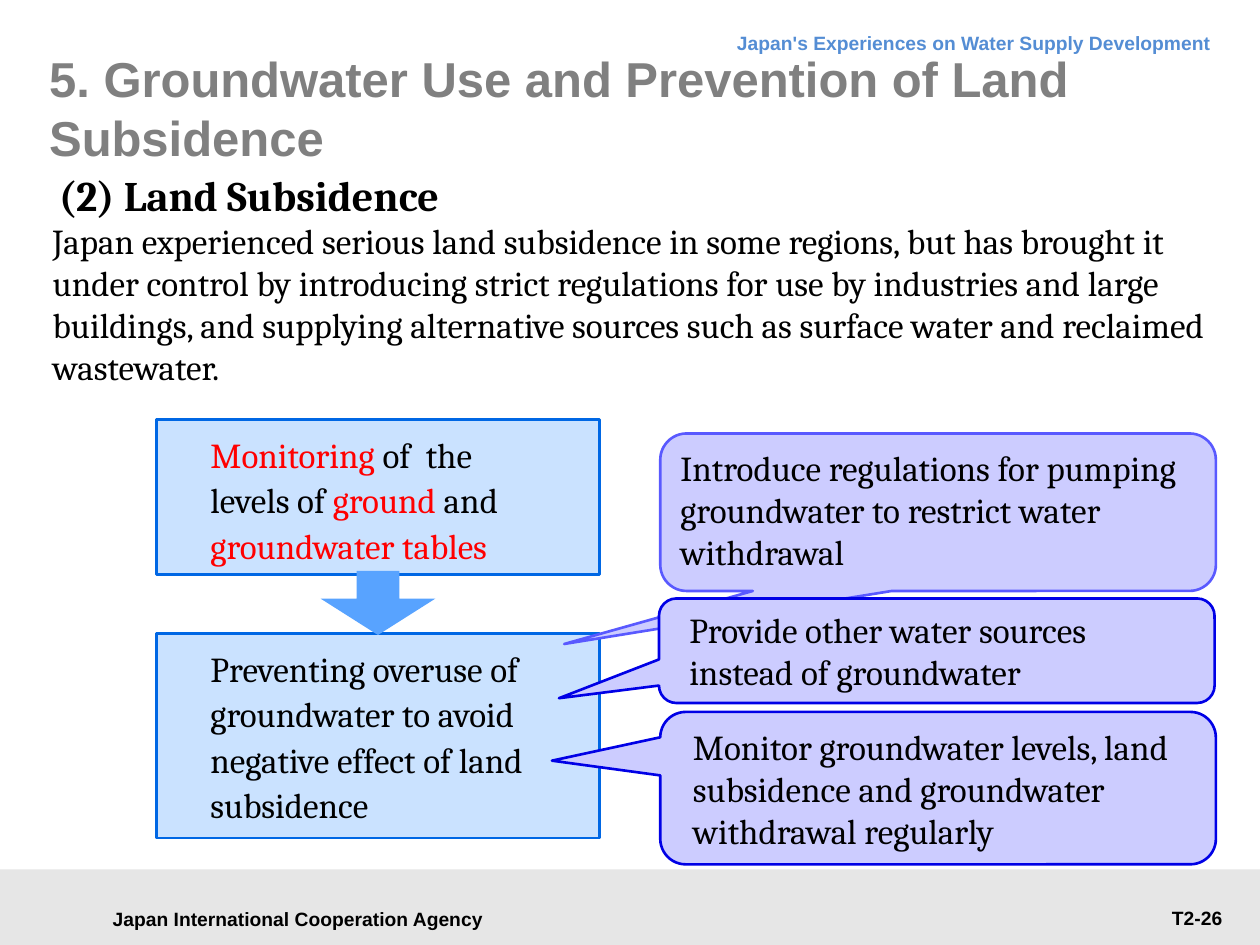
from dataclasses import dataclass

from pptx import Presentation
from pptx.dml.color import RGBColor
from pptx.enum.shapes import MSO_SHAPE
from pptx.enum.text import MSO_ANCHOR, MSO_AUTO_SIZE, PP_ALIGN
from pptx.util import Inches, Pt

RECT, ARROW = MSO_SHAPE.RECTANGLE, MSO_SHAPE.DOWN_ARROW
CALLOUT = MSO_SHAPE.ROUNDED_RECTANGULAR_CALLOUT
TOP, MIDDLE = MSO_ANCHOR.TOP, MSO_ANCHOR.MIDDLE
LEFT, CENTER, RIGHT = PP_ALIGN.LEFT, PP_ALIGN.CENTER, PP_ALIGN.RIGHT
DEFAULT_INSETS = (0.1, 0.05, 0.1, 0.05)


@dataclass(frozen=True)
class Theme:
    sans: str = "Arial"
    serif: str = "Cambria"
    title_size: int = 28
    heading_size: int = 24
    body_size: int = 20
    small_size: int = 11
    line_width: float = 1.5
    black: str = "000000"
    red: str = "FF0000"
    title: str = "808080"
    header: str = "548DD4"
    footer: str = "E6E6E6"
    step: str = "CAE2FF"
    step_line: str = "0067E4"
    arrow: str = "58A3FF"
    callout: str = "CCCCFF"
    callout_line: str = "0000E6"
    callout_soft: str = "5959FF"


T = Theme()


def rgb(value):
    return RGBColor.from_string(value)


def write(sp, runs, size=T.body_size, font=T.serif, bold=False, align=LEFT,
          anchor=TOP, insets=DEFAULT_INSETS, spacing=None):
    """Fill a shape with one paragraph of (text, colour) runs."""
    tf = sp.text_frame
    tf.word_wrap = True
    tf.auto_size = MSO_AUTO_SIZE.NONE
    tf.vertical_anchor = anchor
    (tf.margin_left, tf.margin_top,
     tf.margin_right, tf.margin_bottom) = map(Inches, insets)
    p = tf.paragraphs[0]
    p.alignment = align
    if spacing:
        p.line_spacing = Pt(spacing)
    for text, color in runs:
        r = p.add_run()
        r.text = text
        r.font.name, r.font.size, r.font.bold = font, Pt(size), bold
        r.font.color.rgb = rgb(color)


def add_text(s, box, text, color=T.black, **style):
    write(s.shapes.add_textbox(*map(Inches, box)), [(text, color)], **style)


def add_block(s, kind, box, fill, line=None, adjustments=()):
    sp = s.shapes.add_shape(kind, *map(Inches, box))
    sp.shadow.inherit = False
    sp.fill.solid()
    sp.fill.fore_color.rgb = rgb(fill)
    if line:
        sp.line.color.rgb = rgb(line)
        sp.line.width = Pt(T.line_width)
    else:
        sp.line.fill.background()
    for i, value in enumerate(adjustments):
        sp.adjustments[i] = value
    return sp


def add_step(s, box, runs):
    sp = add_block(s, RECT, box, T.step, T.step_line)
    write(sp, runs, insets=(0.43, 0.08, 0.35, 0.08), spacing=26)


def add_callout(s, box, text, tip, line=T.callout_line,
                insets=(0.2, 0.04, 0.12, 0.04)):
    """Add a callout whose tip is a fraction of its size from its centre."""
    sp = add_block(s, CALLOUT, box, T.callout, line, (*tip, 0.167))
    write(sp, [(text, T.black)], anchor=MIDDLE, insets=insets)


def add_frame(s, width, height):
    """Footer band and the small header and footer texts."""
    small = dict(size=T.small_size, font=T.sans, bold=True)
    band = 0.6
    top = height - band
    add_block(s, RECT, (0, top, width, band), T.footer)
    add_text(s, (0.71, top + 0.22, 3.31, 0.34),
             "Japan International Cooperation Agency",
             align=CENTER, anchor=MIDDLE, **small)
    add_text(s, (width - 7.28, 0.13, 6.99, 0.38),
             "Japan's Experiences on Water Supply Development",
             T.header, align=RIGHT, spacing=18, **small)
    add_text(s, (width - 1.77, top + 0.24, 1.57, 0.29), "T2-26",
             align=RIGHT, **small)


def add_title(s, box):
    sp = s.shapes.title
    sp.left, sp.top, sp.width, sp.height = map(Inches, box)
    write(sp, [("5. Groundwater Use and Prevention of Land Subsidence", T.title)],
          size=T.title_size, font=T.sans, bold=True, anchor=MIDDLE,
          insets=(0, 0, 0, 0))


def add_intro(s, x, y, w):
    add_text(s, (x, y + 0.39, w, 1.45),
             "Japan experienced serious land subsidence in some regions, but has "
             "brought it under control by introducing strict regulations for use "
             "by industries and large buildings, and supplying alternative sources "
             "such as surface water and reclaimed wastewater.")
    add_text(s, (x + 0.05, y, w - 0.05, 0.5), "(2) Land Subsidence",
             size=T.heading_size, bold=True)


def add_steps(s, x, y, w):
    """Two steps, one above the other."""
    add_step(s, (x, y + 1.7, w, 1.62), [
        ("Preventing overuse of groundwater to avoid negative effect of "
         "land subsidence", T.black)])
    add_step(s, (x, y, w, 1.23), [
        ("Monitoring", T.red), (" of  the levels of ", T.black),
        ("ground", T.red), (" and ", T.black),
        ("groundwater tables", T.red)])


def add_step_arrow(s, x, y, w):
    """Arrow centred between the steps that start at x, y."""
    arrow_w = 0.91
    add_block(s, ARROW, (x + (w - arrow_w) / 2, y + 1.2, arrow_w, 0.51),
              T.arrow, adjustments=(0.373, 0.566))


def add_measures(s, x, y, w):
    """Callouts that point at the second step, the middle one in front."""
    add_callout(s, (x, y, w, 1.25),
                "Introduce regulations for pumping groundwater to restrict "
                "water withdrawal",
                (-0.673, 0.837), T.callout_soft, (0.1, 0.04, 0.1, 0.08))
    add_callout(s, (x, y + 2.21, w, 1.21),
                "Monitor groundwater levels, land subsidence and groundwater "
                "withdrawal regularly", (-0.695, -0.18))
    add_callout(s, (x - 0.01, y + 1.31, w, 0.83),
                "Provide other water sources instead of groundwater",
                (-0.68, 0.454))


def main():
    width, height = 10, 7.5
    prs = Presentation()
    prs.slide_width, prs.slide_height = Inches(width), Inches(height)
    s = prs.slides.add_slide(prs.slide_layouts[5])
    steps = (1.24, 3.33, 3.52)
    add_frame(s, width, height)
    add_title(s, (0.39, 0.28, 8.98, 1.14))
    add_intro(s, 0.32, 1.3, 9.48)
    add_steps(s, *steps)
    add_measures(s, 5.24, 3.44, 4.41)
    add_step_arrow(s, *steps)
    prs.save("out.pptx")


if __name__ == "__main__":
    main()
